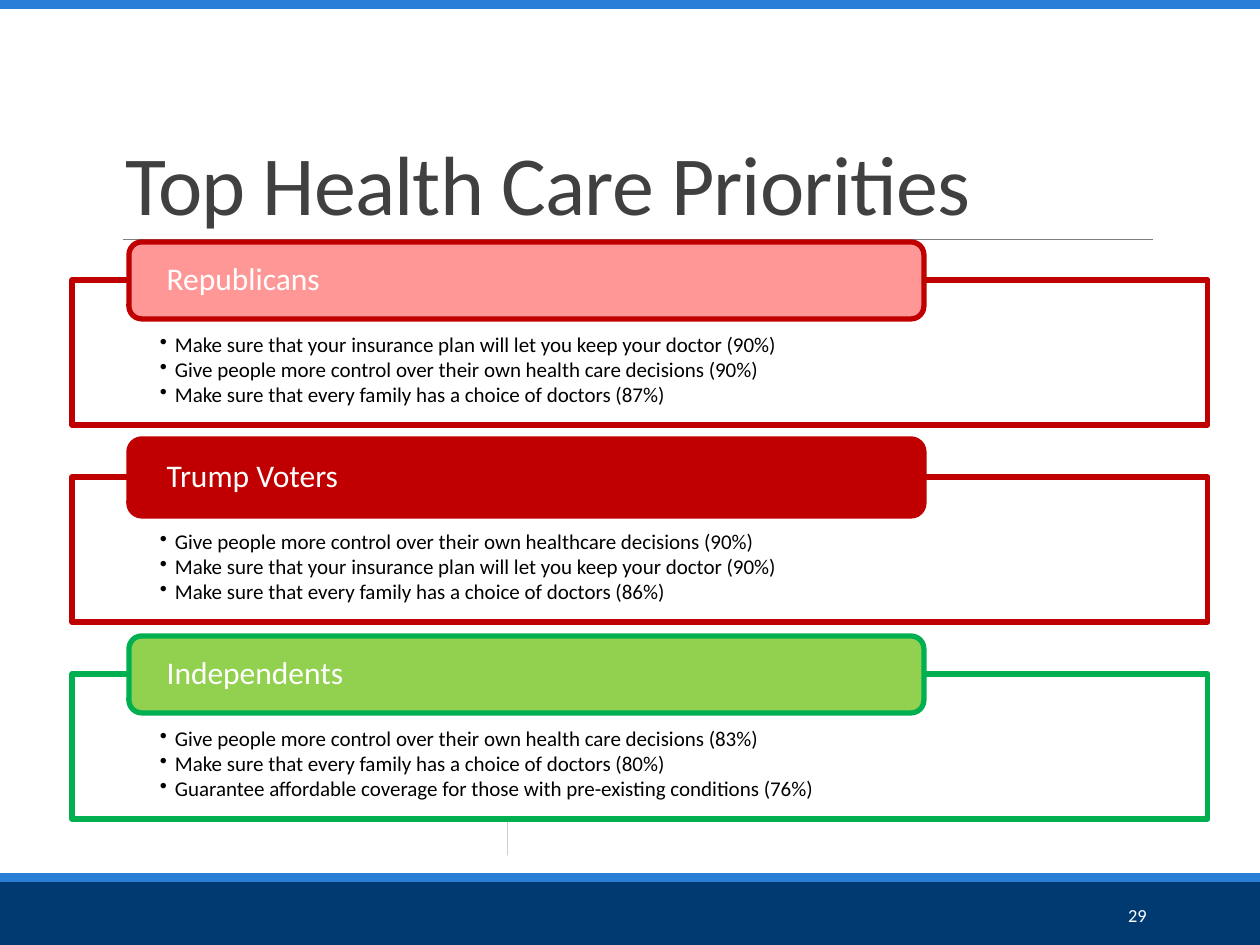
from lxml.etree import SubElement
from pptx import Presentation
from pptx.chart.data import CategoryChartData
from pptx.dml.color import RGBColor
from pptx.enum.chart import XL_CHART_TYPE
from pptx.enum.shapes import MSO_CONNECTOR, MSO_SHAPE
from pptx.enum.text import MSO_ANCHOR, MSO_AUTO_SIZE, PP_ALIGN
from pptx.oxml.ns import qn
from pptx.util import Emu, Pt

PX_PER_INCH = 126
FONT = "Calibri"

WHITE = RGBColor(0xFF, 0xFF, 0xFF)
BLACK = RGBColor(0x00, 0x00, 0x00)
DARK_GRAY = RGBColor(0x40, 0x40, 0x40)
GRAY = RGBColor(0x80, 0x80, 0x80)
NAVY = RGBColor(0x00, 0x3A, 0x70)
BLUE = RGBColor(0x29, 0x7F, 0xD5)
LIGHT_BLUE = RGBColor(0x91, 0xBB, 0xE1)
CORAL = RGBColor(0xFF, 0x71, 0x71)
PINK = RGBColor(0xFF, 0x97, 0x97)
RED = RGBColor(0xC0, 0x00, 0x00)
GREEN = RGBColor(0x00, 0xB0, 0x50)
LIGHT_GREEN = RGBColor(0x92, 0xD0, 0x50)

GROUPS = [
    ("Republicans", PINK, RED, [
        "Make sure that your insurance plan will let you keep your doctor (90%)",
        "Give people more control over their own health care decisions (90%)",
        "Make sure that every family has a choice of doctors (87%)",
    ]),
    ("Trump Voters", RED, RED, [
        "Give people more control over their own healthcare decisions (90%)",
        "Make sure that your insurance plan will let you keep your doctor (90%)",
        "Make sure that every family has a choice of doctors (86%)",
    ]),
    ("Independents", LIGHT_GREEN, GREEN, [
        "Give people more control over their own health care decisions (83%)",
        "Make sure that every family has a choice of doctors (80%)",
        "Guarantee affordable coverage for those with pre-existing conditions (76%)",
    ]),
]
FIRST_HEADER_TOP = 242
GROUP_PITCH = 197
HEADER_TO_BOX = 38


def px(value):
    return Emu(round(value * 914400 / PX_PER_INCH))


def place(left, top, width, height):
    return px(left), px(top), px(width), px(height)


def add_text(paragraph, text, size, color):
    run = paragraph.add_run()
    run.text = text
    run.font.name = FONT
    run.font.size = Pt(size)
    run.font.color.rgb = color
    return run


def set_margins(frame, left, top, right, bottom):
    frame.margin_left, frame.margin_top = px(left), px(top)
    frame.margin_right, frame.margin_bottom = px(right), px(bottom)


def add_block(slide, kind, box, fill, outline=None):
    shape = slide.shapes.add_shape(kind, *place(*box))
    shape.shadow.inherit = False
    shape.fill.solid()
    shape.fill.fore_color.rgb = fill
    if outline is None:
        shape.line.fill.background()
    else:
        shape.line.color.rgb = outline
        shape.line.width = Pt(3)
    return shape


def add_bullet(paragraph):
    properties = paragraph._p.get_or_add_pPr()
    properties.set("marL", str(px(15)))
    properties.set("indent", str(-px(15)))
    SubElement(properties, qn("a:buChar"), char="•")


def add_frame(slide):
    """Draw the bars and the rule that every slide of the deck carries."""
    add_block(slide, MSO_SHAPE.RECTANGLE, (0, 882, 1260, 63), NAVY)
    for top in (873, 0):
        add_block(slide, MSO_SHAPE.RECTANGLE, (0, top, 1260, 9), BLUE)
    rule = slide.shapes.add_connector(
        MSO_CONNECTOR.STRAIGHT, px(123), px(239), px(1153), px(239))
    rule.line.color.rgb = GRAY
    rule.line.width = Pt(0.5)
    SubElement(rule._element.spPr, qn("a:effectLst"))


def add_title(slide, text):
    title = slide.shapes.title
    title.left, title.top, title.width, title.height = place(113, 39, 1040, 200)
    frame = title.text_frame
    frame.auto_size = MSO_AUTO_SIZE.NONE
    frame.vertical_anchor = MSO_ANCHOR.BOTTOM
    paragraph = frame.paragraphs[0]
    paragraph.alignment = PP_ALIGN.LEFT
    paragraph.line_spacing = 0.85
    run = add_text(paragraph, text, 48, DARK_GRAY)
    run.font._element.set("spc", "-50")


def add_slide_number(slide, number):
    frame = slide.shapes.add_textbox(*place(1023, 890, 136, 50)).text_frame
    frame.word_wrap = True
    frame.vertical_anchor = MSO_ANCHOR.MIDDLE
    paragraph = frame.paragraphs[0]
    paragraph.alignment = PP_ALIGN.RIGHT
    add_text(paragraph, number, 10.5, WHITE)


def add_balance_chart(slide):
    data = CategoryChartData(number_format="0%")
    data.categories = ["1"]
    colors = (BLUE, LIGHT_BLUE, GRAY, CORAL)
    for number in range(1, len(colors) + 1):
        data.add_series(f"Series {number}", [0])
    chart = slide.shapes.add_chart(
        XL_CHART_TYPE.BAR_STACKED, *place(-19, 796, 1241, 77), data).chart
    chart.has_legend = False
    chart.has_title = False
    chart.font.name = FONT
    chart.font.size = Pt(10)
    chart.font.color.rgb = BLACK
    chart.category_axis.reverse_order = True
    chart.value_axis.minimum_scale = -0.8
    chart.value_axis.maximum_scale = 1.1
    chart.value_axis.has_major_gridlines = False
    for axis in (chart.category_axis, chart.value_axis):
        axis.visible = False
    plot = chart.plots[0]
    plot.gap_width = 75
    plot.overlap = 100
    plot.vary_by_categories = False
    for series, color in zip(plot.series, colors):
        series.format.fill.solid()
        series.format.fill.fore_color.rgb = color


def add_priority_box(slide, top, outline, priorities):
    box = add_block(slide, MSO_SHAPE.RECTANGLE, (72, top, 1136, 145), WHITE, outline)
    color = box.fill._xPr.find(qn("a:solidFill"))[0]
    SubElement(color, qn("a:alpha"), val="90000")
    frame = box.text_frame
    frame.word_wrap = True
    frame.vertical_anchor = MSO_ANCHOR.TOP
    set_margins(frame, 88, 54, 88, 11)
    for index, priority in enumerate(priorities):
        paragraph = frame.add_paragraph() if index else frame.paragraphs[0]
        add_bullet(paragraph)
        paragraph.alignment = PP_ALIGN.LEFT
        paragraph.line_spacing = 0.9
        paragraph.space_after = Pt(1.5)
        add_text(paragraph, priority, 12, BLACK)


def add_group_header(slide, top, name, fill, outline):
    header = add_block(
        slide, MSO_SHAPE.ROUNDED_RECTANGLE, (129, top, 795, 77), fill, outline)
    frame = header.text_frame
    frame.word_wrap = True
    frame.vertical_anchor = MSO_ANCHOR.MIDDLE
    set_margins(frame, 34, 0, 34, 0)
    paragraph = frame.paragraphs[0]
    paragraph.alignment = PP_ALIGN.LEFT
    paragraph.line_spacing = 0.9
    add_text(paragraph, name, 18, WHITE)


def main():
    presentation = Presentation()
    presentation.slide_width, presentation.slide_height = px(1260), px(945)
    slide = presentation.slides.add_slide(presentation.slide_layouts[5])
    add_frame(slide)
    add_title(slide, "Top Health Care Priorities")
    add_slide_number(slide, "29")
    add_balance_chart(slide)
    for index, (name, fill, outline, priorities) in enumerate(GROUPS):
        top = FIRST_HEADER_TOP + index * GROUP_PITCH
        add_priority_box(slide, top + HEADER_TO_BOX, outline, priorities)
        add_group_header(slide, top, name, fill, outline)
    presentation.save("out.pptx")


if __name__ == "__main__":
    main()
